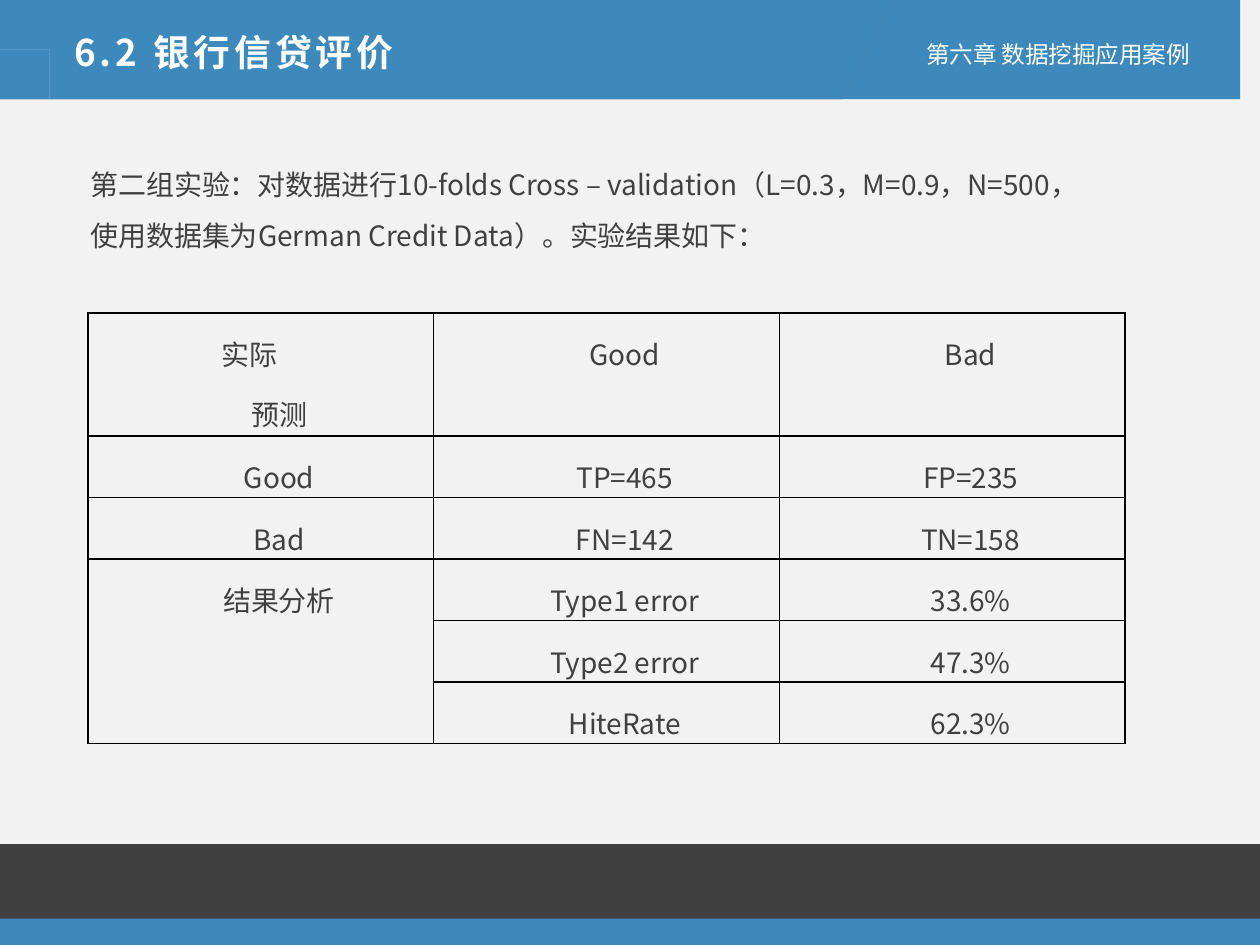
from math import cos, pi, sin

from lxml.etree import SubElement
from pptx import Presentation
from pptx.dml.color import RGBColor
from pptx.enum.shapes import MSO_SHAPE as Preset
from pptx.enum.text import MSO_ANCHOR as Anchor, MSO_AUTO_SIZE as Fit, PP_ALIGN as Align
from pptx.oxml.ns import qn
from pptx.util import Cm, Pt

COLORS = {"back": "F2F2F2", "blue": "3D89BC", "dark": "262626",
          "gray": "404040", "white": "FFFFFF", "line": "000000"}
FONT = "Noto Sans CJK SC"


def write_text(frame, text, size=16, color="gray", bold=False, spacing=None,
               line=1.0, align=Align.LEFT, indents=(0,), anchor=Anchor.TOP):
    frame.text = text
    frame.vertical_anchor = anchor
    for number, paragraph in enumerate(frame.paragraphs):
        paragraph.line_spacing = line
        paragraph.space_before = Pt(0)
        indent = indents[min(number, len(indents) - 1)]
        paragraph.alignment = align if indent < 2 else Align.LEFT
        props = paragraph._p.get_or_add_pPr()
        props.set("marL", "0")
        props.set("indent", str(Cm(indent)))
        SubElement(props, qn("a:buNone"))
        for run in paragraph.runs:
            run.font.size, run.font.bold, run.font.name = Pt(size), bold, FONT
            run.font.color.rgb = RGBColor.from_string(COLORS[color])
            SubElement(run._r.rPr, qn("a:ea"), typeface=FONT)
            if spacing:
                run._r.rPr.set("spc", str(spacing))


def paint(shape, color):
    shape.shadow.inherit = False
    shape.fill.solid()
    shape.fill.fore_color.rgb = RGBColor.from_string(COLORS[color])
    shape.line.fill.background()


deck = Presentation()
deck.slide_width, deck.slide_height = Cm(25.4), Cm(19.05)
slide = deck.slides.add_slide(deck.slide_layouts[1])
shapes = slide.shapes
slide.background.fill.solid()
slide.background.fill.fore_color.rgb = RGBColor.from_string(COLORS["back"])

for top, height, color in [(17.02, 1.52, "gray"), (18.52, 0.53, "blue")]:
    band = shapes.add_shape(Preset.RECTANGLE, 0, Cm(top), Cm(25.4), Cm(height))
    paint(band, color)

lands = [
    [(46, 41), (46, 45), (44, 48), (43, 51), (42, 51), (41, 49), (42, 48),
     (43, 47), (43, 44), (43, 43), (43, 42), (42, 39), (40, 39),
     (39, 39), (38, 39), (36, 37), (35, 33), (40, 32), (39, 30),
     (38, 29), (35, 33), (35, 29), (35, 28), (35, 28), (36, 27),
     (41, 29), (46, 35), (46, 41)],
    [(28, 26), (28, 27), (27, 28), (26, 28), (25, 29), (24, 29), (24, 30),
     (23, 31), (21, 33), (21, 33), (21, 34), (22, 36), (23, 35),
     (23, 35), (24, 35), (25, 36), (27, 36), (33, 36), (31, 41),
     (30, 43), (28, 43), (27, 46), (27, 46), (26, 48), (26, 48),
     (26, 49), (27, 53), (26, 53), (25, 53), (23, 50), (23, 49),
     (23, 48), (22, 47), (22, 45), (22, 44), (19, 44), (19, 41),
     (19, 39), (20, 38), (20, 37), (20, 37), (17, 37), (16, 37),
     (18, 31), (23, 27), (28, 26)],
    [(25, 56), (27, 56), (27, 55), (28, 55), (28, 55), (29, 55), (30, 54),
     (31, 54), (33, 53), (35, 53), (36, 53), (38, 53), (39, 54),
     (36, 56), (33, 57), (30, 57), (28, 57), (27, 56), (25, 56)],
]
globe = [[(0.76 + 0.46 * cos(k * pi / 30), 1.07 + 0.46 * sin(k * pi / 30))
          for k in range(60)]]
for land in lands:
    coast = []
    for start in range(0, len(land) - 1, 3):
        for t in (0, 0.25, 0.5, 0.75):
            weights = ((1 - t) ** 3, 3 * t * (1 - t) ** 2, 3 * t * t * (1 - t), t ** 3)
            coast.append(tuple(
                0.0254 * sum(w * p[axis] for w, p in zip(weights, land[start:start + 4]))
                for axis in (0, 1)))
    globe.append(coast)

left_panel = [(0, 0), (25.4, 0), (17.91, 0), (17.12, 1.85), (0, 1.85)]
dark_edge = [(18.01, 0), (25.4, 0), (25.4, 0.13), (18.11, 0.13), (17.32, 1.98),
             (0, 1.98), (0, 1.85), (17.04, 1.85), (17.83, 0)]
right_panel = [(18.11, 0.13), (25.4, 0.13), (25.4, 1.98), (17.3, 1.98)]
for contours, color in [([left_panel], "blue"), ([dark_edge], "dark"),
                        ([right_panel], "blue"), (globe, "white")]:
    first, *rest = contours
    outline = shapes.build_freeform(*first[0], scale=Cm(1))
    outline.add_line_segments(first[1:])
    for contour in rest:
        outline.move_to(*contour[0])
        outline.add_line_segments(contour[1:])
    paint(outline.convert_to_shape(), color)

heading, intro = shapes.title, slide.placeholders[1]
chapter = shapes.add_textbox(0, 0, Cm(1), Cm(1))
for box, (left, top, width, height), wrap in [
        (heading, (1.24, 0.48, 7.16, 1.14), False),
        (chapter, (18.42, 0.66, 5.94, 0.84), False),
        (intro, (1.57, 2.92, 20.96, 2.18), True)]:
    shapes._spTree.append(box._element)
    box.left, box.top, box.width, box.height = Cm(left), Cm(top), Cm(width), Cm(height)
    box.text_frame.word_wrap = wrap
    box.text_frame.auto_size = Fit.SHAPE_TO_FIT_TEXT
write_text(heading.text_frame, "6.2 银行信贷评价", size=21, color="white", bold=True,
           spacing=220, anchor=Anchor.MIDDLE)
write_text(chapter.text_frame, "第六章 数据挖掘应用案例", size=13.5, color="white",
           anchor=Anchor.MIDDLE)
write_text(intro.text_frame,
           "第二组实验：对数据进行10-folds Cross – validation（L=0.3，M=0.9，N=500，"
           "使用数据集为German Credit Data）。实验结果如下：", line=1.5)

results = [
    ("实际\n预测", "Good", "Bad"),
    ("Good", "TP=465", "FP=235"),
    ("Bad", "FN=142", "TN=158"),
    ("结果分析", "Type1 error", "33.6%"),
    ("", "Type2 error", "47.3%"),
    ("", "HiteRate", "62.3%"),
]
table = shapes.add_table(6, 3, Cm(1.77), Cm(6.31), Cm(20.91), Cm(8.68)).table
table.first_row = table.horz_banding = False
for column in table.columns:
    column.width = Cm(6.97)
for r, values in enumerate(results):
    table.rows[r].height = Cm(2.48 if r == 0 else 1.24)
    for c, value in enumerate(values):
        cell = table.cell(r, c)
        cell.margin_left = cell.margin_right = Cm(0.18)
        cell.margin_top = cell.margin_bottom = 0
        if value:
            write_text(cell.text_frame, value, line=1.5, align=Align.CENTER,
                       indents=(2.52, 0.74) if r == c == 0 else (0.74,))
        for side in ("a:lnL", "a:lnR", "a:lnT", "a:lnB"):
            border = SubElement(cell._tc.get_or_add_tcPr(), qn(side), w=str(Pt(1)))
            fill = SubElement(border, qn("a:solidFill"))
            SubElement(fill, qn("a:srgbClr"), val=COLORS["line"])
        cell.fill.background()
table.cell(3, 0).merge(table.cell(5, 0))

deck.save("out.pptx")
